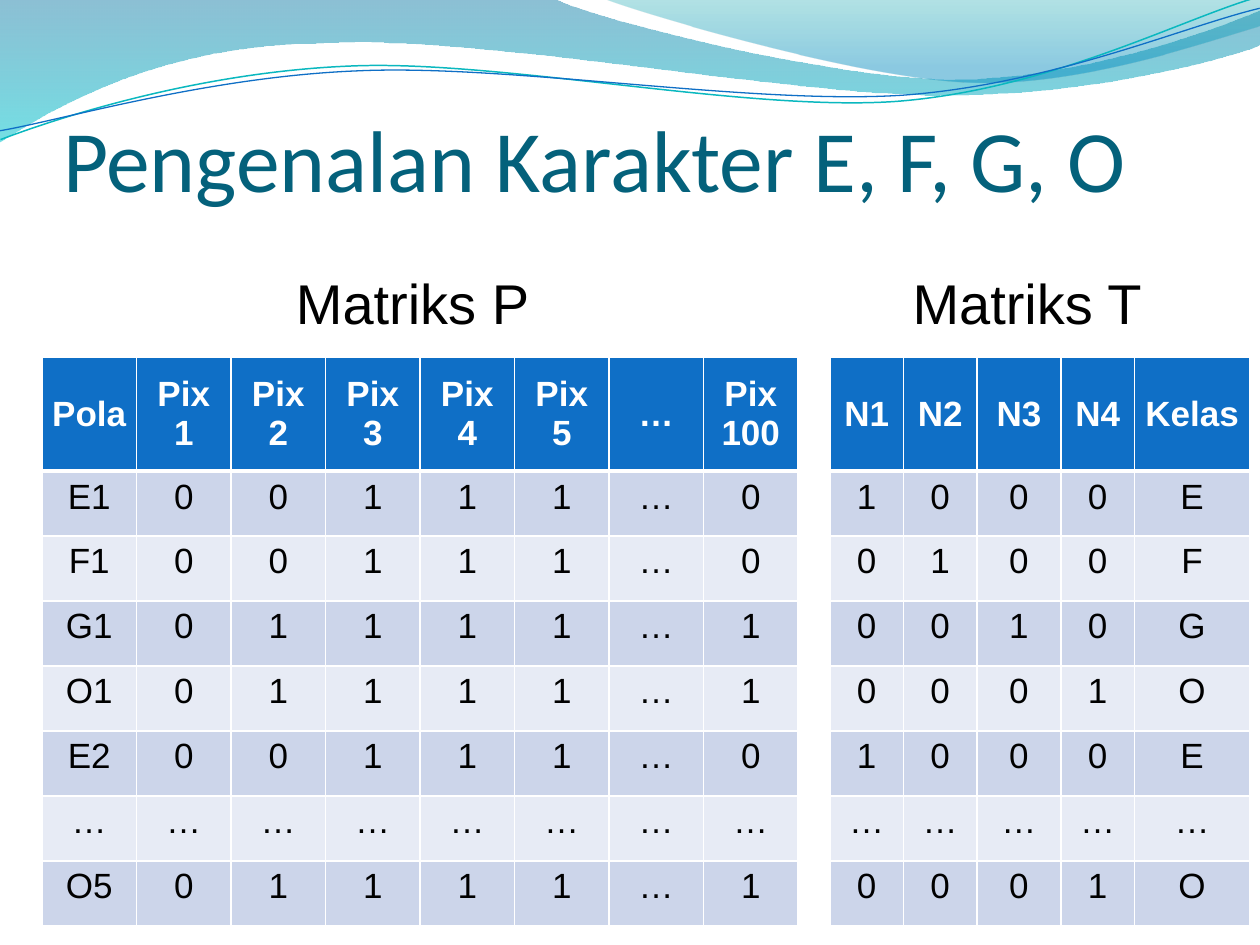
from dataclasses import dataclass

from lxml.etree import Element, SubElement
from pptx import Presentation
from pptx.dml.color import RGBColor
from pptx.enum.text import MSO_ANCHOR as Anchor, MSO_AUTO_SIZE as AutoSize, PP_ALIGN as Align
from pptx.oxml.ns import qn
from pptx.util import Pt

EMU_PER_PX = 914400 / 126
CURVE_ROTATION = 357.3
FIRST_MASTER_SHAPE_ID = 100


@dataclass(frozen=True)
class Theme:
    heading_font: str = "Calibri"
    body_font: str = "Arial"
    title_size: int = 50
    caption_size: int = 32
    cell_size: int = 20
    title: str = "04617B"
    text: str = "000000"
    white: str = "FFFFFF"
    header: str = "0F6FC6"
    bands: tuple = ("CCD5EA", "E7EBF5")
    back_wave: tuple = ((0, "0074A1", 45), (1, "00C6CF", 55))
    front_wave: tuple = ((0, "00A1A9", 30), (0.8, "008BBF", 45))
    teal_line: str = "0AB8BF"
    blue_line: str = "0F6FC6"


@dataclass(frozen=True)
class Box:
    left: int
    top: int
    width: int
    height: int

    def emu(self):
        return [px(n) for n in (self.left, self.top, self.width, self.height)]


THEME = Theme()

BACK_WAVE = [
    (0, -1), (554, -1), (600, 21, 837, 79, 955, 79), (1075, 79, 1207, 33, 1260, 11),
    (1261, 45), (1239, 55, 1096, 96, 940, 95), (784, 95, 481, 35, 324, 43),
    (163, 44, 58, 105, -1, 142),
]
FRONT_WAVE = [
    (604, -1), (641, 14, 859, 78, 969, 82), (1079, 87, 1211, 40, 1260, 26), (1260, 0),
]
TEAL_CURVE = [
    (-2, 110), (59, 90, 200, 52, 350, 53), (499, 53, 745, 118, 896, 114),
    (1049, 109, 1184, 45, 1260, 27),
]
BLUE_CURVE = [
    (-2, 101), (57, 94, 207, 57, 357, 58), (509, 58, 750, 111, 902, 108),
    (1052, 104, 1187, 52, 1262, 38),
]

MATRIX_P = [["Pola", *(f"Pix\n{n}" for n in range(1, 6)), "…", "Pix\n100"]] + [
    row.split() for row in (
        "E1 0 0 1 1 1 … 0",
        "F1 0 0 1 1 1 … 0",
        "G1 0 1 1 1 1 … 1",
        "O1 0 1 1 1 1 … 1",
        "E2 0 0 1 1 1 … 0",
        "… … … … … … … …",
        "O5 0 1 1 1 1 … 1",
    )
]
MATRIX_T = [row.split() for row in (
    "N1 N2 N3 N4 Kelas",
    "1 0 0 0 E",
    "0 1 0 0 F",
    "0 0 1 0 G",
    "0 0 0 1 O",
    "1 0 0 0 E",
    "… … … … …",
    "0 0 0 1 O",
)]


def px(length):
    return round(length * EMU_PER_PX)


def rgb(value):
    return RGBColor.from_string(value)


def format_text(frame, font_name, size, color, align, bold=False):
    for paragraph in frame.paragraphs:
        paragraph.alignment = align
        font = paragraph.font
        font.name, font.size, font.bold = font_name, Pt(size), bold
        font.color.rgb = rgb(color)


def add_outline(slide, box, segments, close):
    anchors = [(px(box.left + s[-2]), px(box.top + s[-1])) for s in segments]
    builder = slide.shapes.build_freeform(*anchors[0], scale=1.0)
    builder.add_line_segments(anchors[1:], close=close)
    shape = builder.convert_to_shape()
    shape.shadow.inherit = False
    nodes = list(shape.element.iter(qn("a:lnTo")))
    for node, segment in zip(nodes, segments[1:]):
        if len(segment) == 2:
            continue
        node.tag = qn("a:cubicBezTo")
        for index in (0, 1):
            x, y = segment[2 * index:2 * index + 2]
            node.insert(index, Element(
                qn("a:pt"),
                x=str(px(box.left + x) - shape.left),
                y=str(px(box.top + y) - shape.top),
            ))
    return shape


def add_wave_banner(slide, box):
    shapes = []
    for segments, stops in ((BACK_WAVE, THEME.back_wave), (FRONT_WAVE, THEME.front_wave)):
        shape = add_outline(slide, box, segments, close=True)
        shape.line.fill.background()
        shape.fill.gradient()
        shape.fill.gradient_angle = 270
        for stop, (position, color, _) in zip(shape.fill.gradient_stops, stops):
            stop.position = position
            stop.color.rgb = rgb(color)
        for node, (_, _, opacity) in zip(shape.element.spPr.iter(qn("a:srgbClr")), stops):
            SubElement(node, qn("a:alpha"), val=str(opacity * 1000))
        shapes.append(shape)
    curves = ((TEAL_CURVE, THEME.teal_line, 0.85), (BLUE_CURVE, THEME.blue_line, 0.75))
    for segments, color, width in curves:
        shape = add_outline(slide, box, segments, close=False)
        shape.rotation = CURVE_ROTATION
        shape.fill.background()
        shape.line.color.rgb = rgb(color)
        shape.line.width = Pt(width)
        shapes.append(shape)
    master_tree = slide.slide_layout.slide_master.shapes.element
    for index, shape in enumerate(shapes):
        shape.element.nvSpPr.cNvPr.set("id", str(FIRST_MASTER_SHAPE_ID + index))
        master_tree.insert(2 + index, shape.element)


def place_title(slide, box, text):
    title = slide.shapes.title
    title.left, title.top, title.width, title.height = box.emu()
    frame = title.text_frame
    frame.text = text
    frame.auto_size = AutoSize.NONE
    frame.vertical_anchor = Anchor.BOTTOM
    frame.margin_left = frame.margin_right = frame.margin_bottom = 0
    format_text(frame, THEME.heading_font, THEME.title_size, THEME.title, Align.LEFT)


def set_borders(cell, row):
    properties = cell._tc.get_or_add_tcPr()
    widths = {"L": 1, "R": 1, "T": 3 if row == 1 else 1, "B": 3 if row == 0 else 1}
    for side, width in widths.items():
        line = SubElement(properties, qn(f"a:ln{side}"), w=str(Pt(width)))
        fill = SubElement(line, qn("a:solidFill"))
        SubElement(fill, qn("a:srgbClr"), val=THEME.white)


def fill_cell(cell, text, row):
    is_header = row == 0
    set_borders(cell, row)
    cell.fill.solid()
    cell.fill.fore_color.rgb = rgb(THEME.header if is_header else THEME.bands[(row - 1) % 2])
    cell.margin_left = cell.margin_right = 0
    cell.vertical_anchor = Anchor.MIDDLE if is_header else Anchor.TOP
    cell.text = text
    format_text(cell.text_frame, THEME.body_font, THEME.cell_size,
                THEME.white if is_header else THEME.text, Align.CENTER, is_header)


def add_matrix(slide, box, caption, caption_width, rows, column_weights):
    caption_height, table_offset, header_height = 81, 95, 114
    caption_box = Box(box.left, box.top, caption_width, caption_height)
    frame = slide.shapes.add_textbox(*caption_box.emu()).text_frame
    frame.word_wrap = True
    frame.auto_size = AutoSize.SHAPE_TO_FIT_TEXT
    frame.text = caption
    format_text(frame, THEME.body_font, THEME.caption_size, THEME.text, Align.CENTER)

    table_box = Box(box.left, box.top + table_offset, box.width, box.height - table_offset)
    table = slide.shapes.add_table(len(rows), len(column_weights), *table_box.emu()).table
    for column, weight in zip(table.columns, column_weights):
        column.width = px(box.width * weight / sum(column_weights))
    body_height = (table_box.height - header_height) / (len(rows) - 1)
    for row_index, values in enumerate(rows):
        table.rows[row_index].height = px(body_height if row_index else header_height)
        for column_index, value in enumerate(values):
            fill_cell(table.cell(row_index, column_index), value, row_index)


def main():
    presentation = Presentation()
    presentation.slide_width, presentation.slide_height = px(1260), px(945)
    slide = presentation.slides.add_slide(presentation.slide_layouts[5])
    add_wave_banner(slide, Box(0, 0, 1260, 142))
    place_title(slide, Box(63, 53, 1144, 157), "Pengenalan Karakter E, F, G, O")
    add_matrix(slide, Box(42, 262, 756, 664), "Matriks P ", 756, MATRIX_P, [1] * 8)
    add_matrix(slide, Box(830, 262, 420, 664), "Matriks T ", 409, MATRIX_T, [7, 7, 8, 7, 11])
    presentation.save("out.pptx")


if __name__ == "__main__":
    main()
